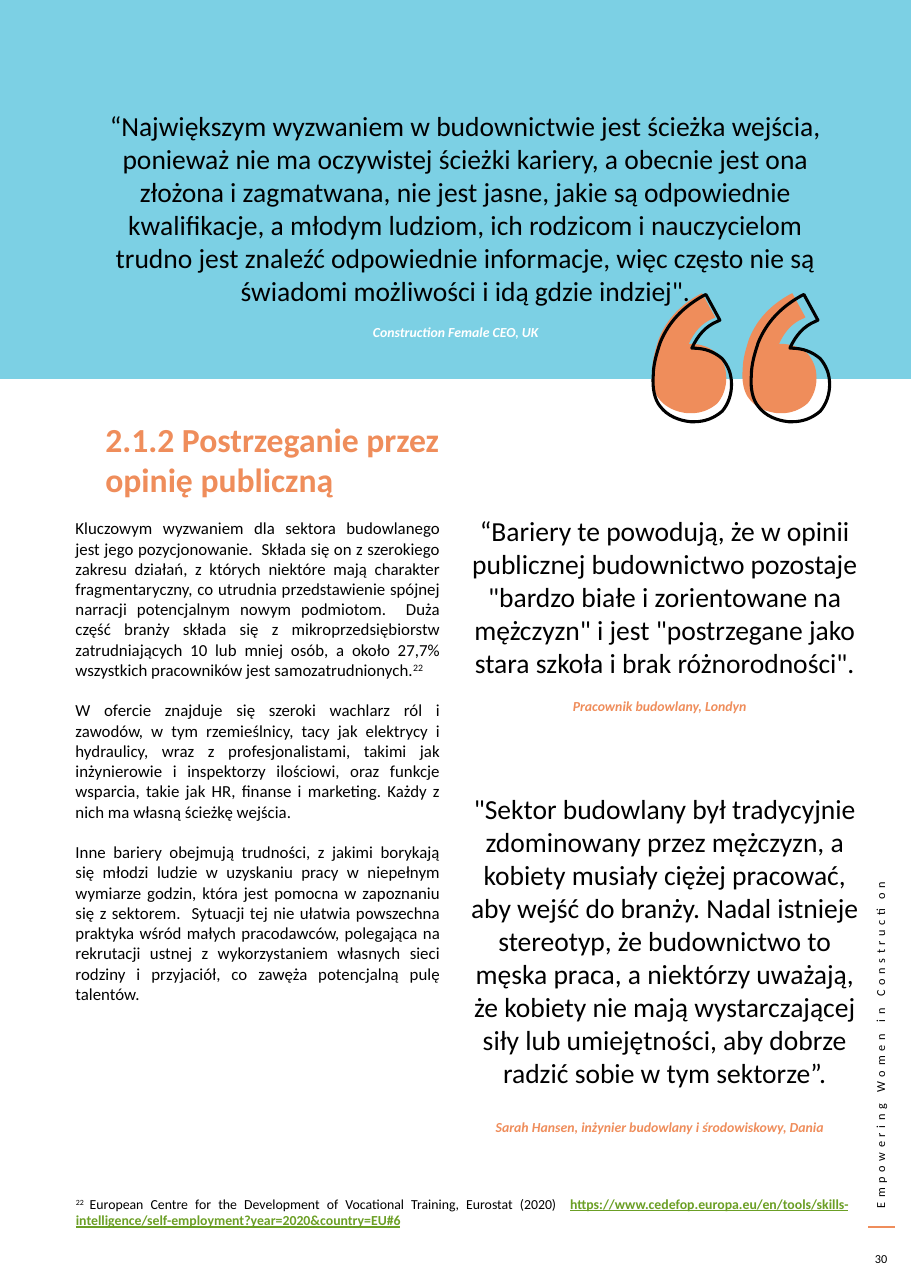
from itertools import chain

from pptx import Presentation
from pptx.dml.color import RGBColor
from pptx.enum.shapes import MSO_CONNECTOR as Connector, MSO_SHAPE as Shape
from pptx.enum.text import MSO_ANCHOR as Anchor, PP_ALIGN as Align
from pptx.oxml.ns import qn
from pptx.util import Cm, Pt
from lxml.etree import SubElement

BLUE, ORANGE, GREEN, BLACK, WHITE = "7CD0E4", "EF8D5B", "6B9F25", "000000", "FFFFFF"


def color(hex_code):
    return RGBColor.from_string(hex_code)


def add_text(box, paragraphs, size, ink=BLACK, align=Align.LEFT, anchor=Anchor.TOP,
             bold=False, italic=False, line_spacing=None, gap=0):
    """Add a text box; each paragraph is a list of (text, style) runs.

    The style is "", "super" or "link".
    """
    text_box = slide.shapes.add_textbox(*[Cm(length) for length in box])
    frame = text_box.text_frame
    frame.word_wrap = True
    frame.vertical_anchor = anchor
    for index, runs in enumerate(paragraphs):
        paragraph = frame.add_paragraph() if index else frame.paragraphs[0]
        paragraph.alignment = align
        if line_spacing:
            paragraph.line_spacing = line_spacing
        if index:
            paragraph.space_before = Pt(gap)
        for text, style in runs:
            run = paragraph.add_run()
            run.text = text
            font = run.font
            font.name, font.size = "Calibri", Pt(size)
            font.bold, font.italic = bold, italic
            font.color.rgb = color(ink)
            if style == "super":
                run._r.get_or_add_rPr().set("baseline", "30000")
            elif style == "link":
                font.bold = font.underline = True
                font.color.rgb = color(GREEN)
    return text_box


presentation = Presentation()
presentation.slide_width, presentation.slide_height = Cm(21), Cm(29.7)
slide = presentation.slides.add_slide(presentation.slide_layouts[6])

# Side title, rule and page number
side_title = add_text((15.9, 23.4, 8.81, 0.61),
                      [[("Empowering Women in Construction", "")]], 8)
side_title.rotation = 270
for run in side_title.text_frame.paragraphs[0].runs:
    run._r.get_or_add_rPr().set("spc", "300")

rule = slide.shapes.add_connector(Connector.STRAIGHT, Cm(20.62), Cm(28.29), Cm(20.02), Cm(28.29))
rule.line.color.rgb = color(ORANGE)
rule.line.width = Pt(1)
SubElement(rule._element.spPr, qn("a:effectLst"))

add_text((19.82, 28.65, 0.99, 0.74), [[("30", "")]], 8, align=Align.CENTER, anchor=Anchor.MIDDLE)

# Blue band
band = slide.shapes.add_shape(Shape.RECTANGLE, 0, Cm(-0.13), Cm(21), Cm(8.87))
band.shadow.inherit = False
band.fill.solid()
band.fill.fore_color.rgb = color(BLUE)
band.line.fill.background()

# Quotes
quotes = [
    ((1.84, 1.59, 17.78, 6.43),
     "“Największym wyzwaniem w budownictwie jest ścieżka wejścia, ponieważ nie ma oczywistej "
     "ścieżki kariery, a obecnie jest ona złożona i zagmatwana, nie jest jasne, jakie są "
     "odpowiednie kwalifikacje, a młodym ludziom, ich rodzicom i nauczycielom trudno jest "
     "znaleźć odpowiednie informacje, więc często nie są świadomi możliwości i idą gdzie "
     "indziej\"."),
    ((10.56, 11.56, 9.53, 4.39),
     "“Bariery te powodują, że w opinii publicznej budownictwo pozostaje \"bardzo białe i "
     "zorientowane na mężczyzn\" i jest \"postrzegane jako stara szkoła i brak różnorodności\"."),
    ((10.56, 17.43, 9.53, 8.51),
     "\"Sektor budowlany był tradycyjnie zdominowany przez mężczyzn, a kobiety musiały ciężej "
     "pracować, aby wejść do branży. Nadal istnieje stereotyp, że budownictwo to męska praca, "
     "a niektórzy uważają, że kobiety nie mają wystarczającej siły lub umiejętności, aby "
     "dobrze radzić sobie w tym sektorze”."),
]
for box, quote in quotes:
    add_text(box, [[(quote, "")]], 18, align=Align.CENTER, anchor=Anchor.MIDDLE)

speakers = [
    (5.97, 7.29, "Construction Female CEO, UK", WHITE),
    (10.67, 15.9, "Pracownik budowlany, Londyn", ORANGE),
    (10.67, 25.62, "Sarah Hansen, inżynier budowlany i środowiskowy, Dania", ORANGE),
]
for left, top, speaker, ink in speakers:
    add_text((left, top, 9.07, 1.09), [[(speaker, "")]], 9, ink, Align.CENTER,
             bold=True, italic=True, line_spacing=1.15)

# Quotation marks: three points make a curve and one makes a line
MARK_UNIT = Cm(0.0254)
mark_start = (35, 109)
mark_segments = [
    [(34, 109), (33, 109), (32, 109)], [(22, 108), (12, 104), (6, 96)],
    [(1, 90), (-1, 80), (0, 69)], [(0, 60), (3, 50), (6, 41)],
    [(13, 24), (25, 11), (43, 1)], [(45, 0)], [(57, 22)], [(55, 23)],
    [(45, 27), (38, 35), (33, 46)], [(34, 46)],
    [(44, 46), (52, 49), (59, 55)], [(64, 61), (67, 68), (67, 77)],
    [(67, 86), (64, 94), (59, 100)], [(52, 106), (44, 109), (35, 109)],
]
mark_points = [mark_start, *chain.from_iterable(mark_segments)]

# left, top, distance between the two marks, scale, filled
for left, top, pitch, scale, filled in [(15.04, 6.76, 2.08, 1, True),
                                        (15.06, 6.79, 2.26, 1.06, False)]:
    builder = slide.shapes.build_freeform()
    for offset in (0, Cm(pitch)):
        points = [(x * scale * MARK_UNIT + offset, y * scale * MARK_UNIT) for x, y in mark_points]
        builder.move_to(*points[0])
        builder.add_line_segments(points[1:], close=True)
    marks = builder.convert_to_shape(Cm(left), Cm(top))
    outline = next(marks._element.iter(qn("a:path")))
    outline.remove(outline[0])  # unused start of the builder
    lines = iter(outline.findall(qn("a:lnTo")))
    for segment in mark_segments * 2:
        line = next(lines)
        if len(segment) == 3:
            curve = SubElement(outline, qn("a:cubicBezTo"))
            line.addprevious(curve)
            for control in (line, next(lines), next(lines)):
                curve.append(control[0])
                outline.remove(control)
    marks.shadow.inherit = False
    if filled:
        marks.fill.solid()
        marks.fill.fore_color.rgb = color(ORANGE)
        marks.line.fill.background()
    else:
        marks.fill.background()
        marks.line.color.rgb = color("010101")
        marks.line.width = Pt(2)

# Section heading, body and footnote
add_text((2.18, 9.53, 9.07, 1.22), [[("2.1.2 Postrzeganie przez opinię publiczną", "")]],
         22, ORANGE, bold=True)

body = [
    [("Kluczowym wyzwaniem dla sektora budowlanego jest jego pozycjonowanie.  Składa się on z "
      "szerokiego zakresu działań, z których niektóre mają charakter fragmentaryczny, co utrudnia "
      "przedstawienie spójnej narracji potencjalnym nowym podmiotom.  Duża część branży składa się "
      "z mikroprzedsiębiorstw zatrudniających 10 lub mniej osób, a około 27,7% wszystkich "
      "pracowników jest samozatrudnionych.", ""), ("22", "super")],
    [("W ofercie znajduje się szeroki wachlarz ról i zawodów, w tym rzemieślnicy, tacy jak "
      "elektrycy i hydraulicy, wraz z profesjonalistami, takimi jak inżynierowie i inspektorzy "
      "ilościowi, oraz funkcje wsparcia, takie jak HR, finanse i marketing. Każdy z nich ma własną "
      "ścieżkę wejścia.", "")],
    [("Inne bariery obejmują trudności, z jakimi borykają się młodzi ludzie w uzyskaniu pracy w "
      "niepełnym wymiarze godzin, która jest pomocna w zapoznaniu się z sektorem.  Sytuacji tej "
      "nie ułatwia powszechna praktyka wśród małych pracodawców, polegająca na rekrutacji ustnej "
      "z wykorzystaniem własnych sieci rodziny i przyjaciół, co zawęża potencjalną pulę "
      "talentów.", "")],
]
add_text((1.49, 11.82, 8.91, 13.87), body, 11, align=Align.JUSTIFY, gap=13.4)

footnote = [
    ("22 ", "super"),
    ("European Centre for the Development of Vocational Training, Eurostat (2020)  ", ""),
    ("https://www.cedefop.europa.eu/en/tools/skills-intelligence/self-employment"
     "?year=2020&country=EU#6", "link"),
]
add_text((1.5, 27.44, 18.31, 2.26), [footnote], 9, align=Align.JUSTIFY)

presentation.save("out.pptx")
